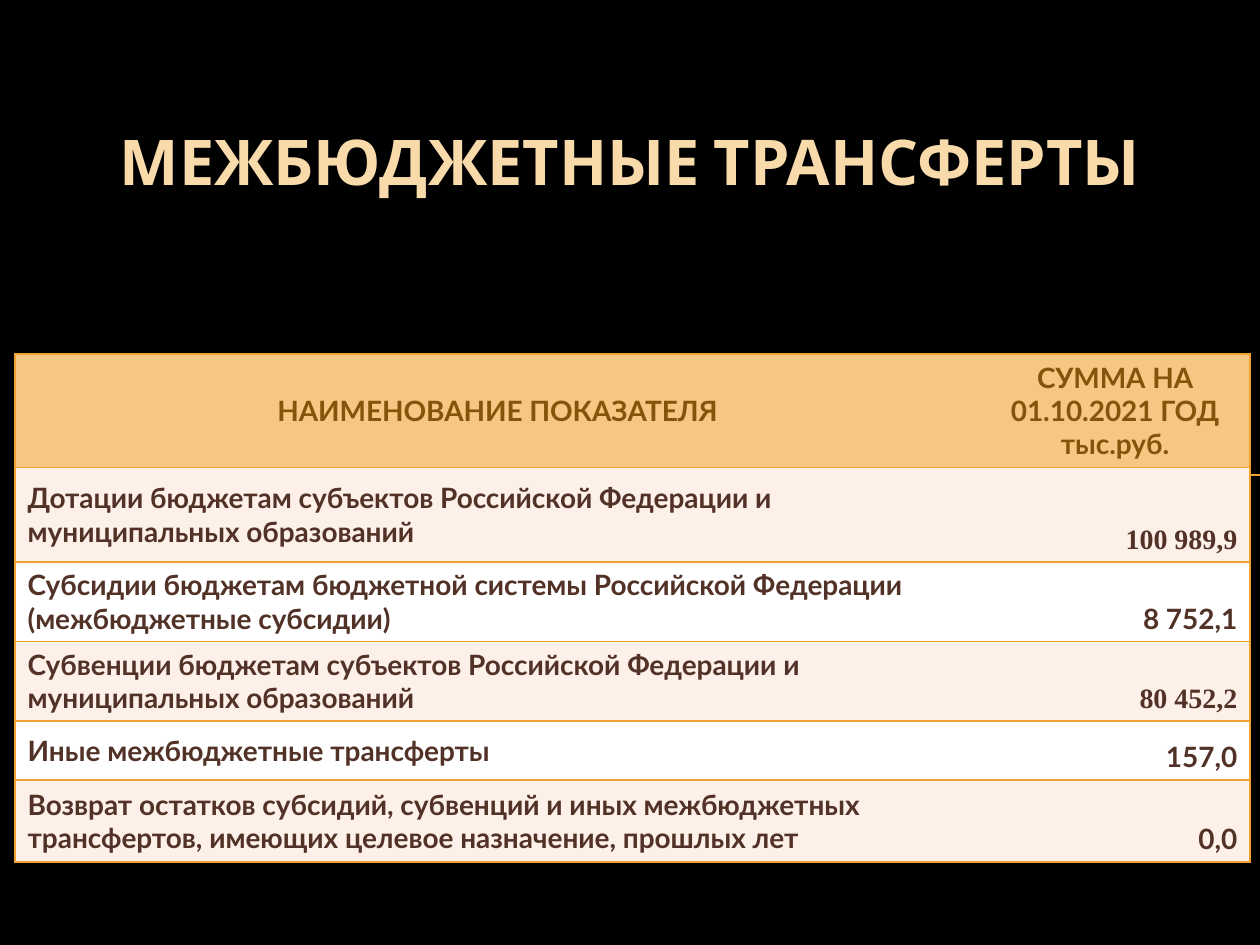
from lxml import etree
from pptx import Presentation
from pptx.dml.color import RGBColor
from pptx.enum.shapes import MSO_CONNECTOR
from pptx.enum.text import MSO_ANCHOR, PP_ALIGN
from pptx.oxml.ns import qn
from pptx.util import Inches, Pt

GOLD = "F0A22E"


def rgb(value):
    return RGBColor.from_string(value)


def set_border(cell, side, color):
    """Draw a 1 pt border on one side (L, R, T, B), or none without a colour."""
    ln = etree.SubElement(cell._tc.get_or_add_tcPr(), qn("a:ln" + side), w=str(Pt(1)))
    if color:
        fill = etree.SubElement(ln, qn("a:solidFill"))
        etree.SubElement(fill, qn("a:srgbClr"), val=color)
    else:
        etree.SubElement(ln, qn("a:noFill"))


prs = Presentation()
prs.slide_width, prs.slide_height = Inches(10), Inches(7.5)
s = prs.slides.add_slide(prs.slide_layouts[5])
s.background.fill.solid()
s.background.fill.fore_color.rgb = rgb("000000")

# Rule behind the table
rule = s.shapes.add_connector(MSO_CONNECTOR.STRAIGHT, Inches(0.56), Inches(3.77),
                              Inches(10), Inches(3.77))
rule.line.color.rgb = rgb(GOLD)
rule.line.width = Pt(0.75)
etree.SubElement(rule._element.spPr, qn("a:effectLst"))

# Title
title = s.shapes.title
title.left, title.top = Inches(0), Inches(0.92)
title.width, title.height = Inches(10), Inches(1.97)
tf = title.text_frame
tf.text = "МЕЖБЮДЖЕТНЫЕ ТРАНСФЕРТЫ"
tf.vertical_anchor = MSO_ANCHOR.TOP
p = tf.paragraphs[0]
p.alignment = PP_ALIGN.CENTER
font = p.runs[0].font
font.name, font.size, font.bold = "Cabin", Pt(36), True
font.color.rgb = rgb("F9DAAB")

# Table: name, amount, font of the amount, row height
rows = [
    ("НАИМЕНОВАНИЕ ПОКАЗАТЕЛЯ", "СУММА НА 01.10.2021 ГОД\nтыс.руб.", "Lato", 0.9),
    ("Дотации бюджетам субъектов Российской Федерации и муниципальных образований",
     "100 989,9", "Times New Roman", 0.75),
    ("Субсидии бюджетам бюджетной системы Российской Федерации (межбюджетные субсидии)",
     "8 752,1", "Lato", 0.63),
    ("Субвенции бюджетам субъектов Российской Федерации и муниципальных образований",
     "80 452,2", "Times New Roman", 0.63),
    ("Иные межбюджетные трансферты", "157,0", "Lato", 0.47),
    ("Возврат остатков субсидий, субвенций и иных межбюджетных трансфертов, "
     "имеющих целевое назначение, прошлых лет", "0,0", "Lato", 0.65),
]
table = s.shapes.add_table(len(rows), 2, Inches(0.12), Inches(2.81),
                           Inches(9.8), Inches(4.03)).table
table.columns[0].width, table.columns[1].width = Inches(7.66), Inches(2.14)

for i, (name, amount, amount_font, height) in enumerate(rows):
    table.rows[i].height = Inches(height)
    header = i == 0
    fill = "F6C782" if header else ("FCF0E8" if i % 2 else "FFFFFF")
    for j, text in enumerate((name, amount)):
        cell = table.cell(i, j)
        # Only the outer edges and the row lines are drawn
        set_border(cell, "L", GOLD if j == 0 else None)
        set_border(cell, "R", GOLD if j == 1 else None)
        set_border(cell, "T", GOLD)
        set_border(cell, "B", GOLD)
        cell.fill.solid()
        cell.fill.fore_color.rgb = rgb(fill)
        cell.vertical_anchor = MSO_ANCHOR.MIDDLE if header or j == 0 else MSO_ANCHOR.BOTTOM
        cell.text_frame.text = text
        for p in cell.text_frame.paragraphs:
            if header:
                p.alignment = PP_ALIGN.CENTER
            else:
                p.alignment = PP_ALIGN.RIGHT if j else PP_ALIGN.LEFT
            font = p.runs[0].font
            font.name = amount_font if j else "Lato"
            font.size, font.bold = Pt(16), True
            font.color.rgb = rgb("85540A" if header else "523227")

prs.save("out.pptx")
